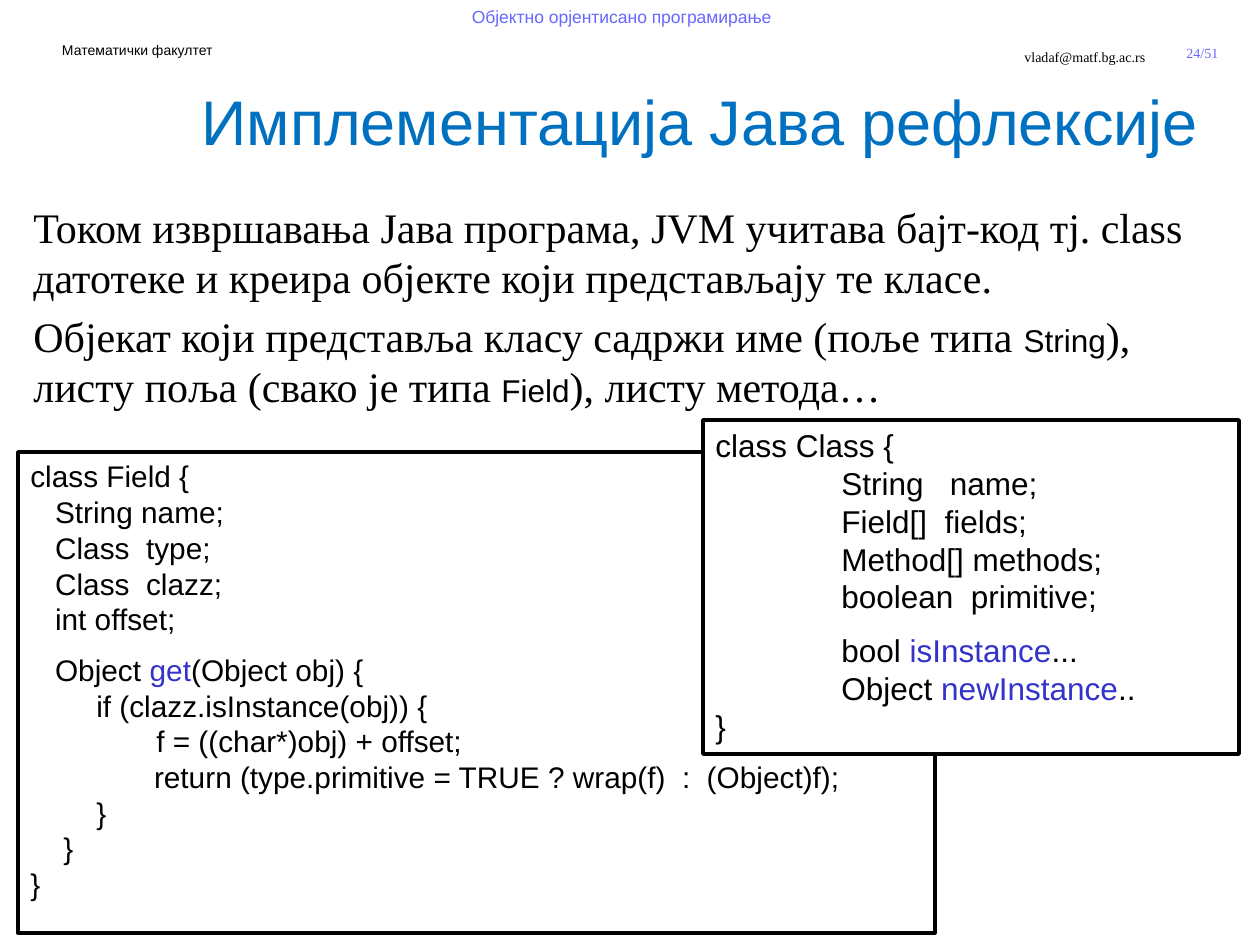
from lxml import etree
from pptx import Presentation
from pptx import util as u
from pptx.dml.color import RGBColor
from pptx.enum import shapes, text
from pptx.oxml.ns import qn

PX = 914400 / 126
WHITE = RGBColor(0xFF, 0xFF, 0xFF)
BLACK = RGBColor(0x00, 0x00, 0x00)
TITLE_BLUE = RGBColor(0x00, 0x70, 0xC0)
HEADER_BLUE = RGBColor(0x67, 0x67, 0xFF)
METHOD_BLUE = RGBColor(0x33, 0x33, 0xCC)
SANS, SERIF = "Arial", "Times New Roman"
LEFT, CENTER, RIGHT = text.PP_ALIGN.LEFT, text.PP_ALIGN.CENTER, text.PP_ALIGN.RIGHT

FIELD_CODE = [
    [("class Field {\n   String name;\n   Class  type;\n   Class  clazz;\n   int offset;", None)],
    [("   Object ", None), ("get", METHOD_BLUE),
     ("(Object obj) {\n        if (clazz.isInstance(obj)) {\n   \tf = ((char*)obj) + offset;\n"
      "               return (type.primitive = TRUE ? wrap(f)  :  (Object)f);", None)],
    [("        }\n    }\n}", None)],
]
CLASS_CODE = [
    [("class Class {\n\tString   name;\n\tField[]  fields;\n\tMethod[] methods;\n"
      "\tboolean  primitive;", None)],
    [("\tbool ", None), ("isInstance", METHOD_BLUE), ("...\n\tObject ", None),
     ("newInstance", METHOD_BLUE), ("..\n}", None)],
]
BODY = [
    [("Током извршавања Јава програма, JVM учитава бајт-код тј. class датотеке "
      "и креира објекте који представљају те класе.", False)],
    [("Објекат који представља класу садржи име (поље типа ", False), ("String", True),
     ("), листу поља (свако је типа ", False), ("Field", True), ("), листу метода…", False)],
]


def px(*lengths):
    """Turn pixel lengths into EMU."""
    return [u.Emu(round(length * PX)) for length in lengths]


def style(para, size, face, color, align=LEFT):
    """Set the font and alignment of a paragraph."""
    para.alignment = align
    para.font.size, para.font.name = u.Pt(size), face
    para.font.color.rgb = color


def add_label(page, box, wording, size, face, color, align, wrap=True):
    """Place one line of text in a box."""
    frame = page.shapes.add_textbox(*px(*box)).text_frame
    frame.word_wrap = wrap
    para = frame.paragraphs[0]
    para.text = wording
    style(para, size, face, color, align)
    return frame


def add_header(page, left, top, width):
    """Place the running header with course, faculty, address and page number."""
    add_label(page, (left + 422, top, 399, 63), "Објектно орјентисано програмирање",
              10, SANS, HEADER_BLUE, CENTER)
    add_label(page, (left + 48, top + 35, 179, 30), "Математички факултет",
              8, SANS, BLACK, CENTER, False)
    add_label(page, (left + width - 420, top + 42, 318, 63), "vladaf@matf.bg.ac.rs",
              8, SERIF, BLACK, RIGHT)
    number = add_label(page, (left + width - 89, top + 38, 63, 29), "24/51",
                       8, SERIF, HEADER_BLUE, CENTER, False)
    number.vertical_anchor = text.MSO_ANCHOR.MIDDLE


def add_title(page, box):
    """Move and format the title placeholder."""
    title = page.shapes.title
    title.left, title.top, title.width, title.height = px(*box)
    frame = title.text_frame
    frame.text = "Имплементација Јава рефлексије"
    frame.auto_size = text.MSO_AUTO_SIZE.NONE
    frame.vertical_anchor = text.MSO_ANCHOR.TOP
    style(frame.paragraphs[0], 36, SANS, TITLE_BLUE)


def add_body(page, box):
    """Place the running text, with type names in the smaller sans face."""
    frame = page.shapes.add_textbox(*px(*box)).text_frame
    frame.word_wrap = True
    for index, spans in enumerate(BODY):
        para = frame.add_paragraph() if index else frame.paragraphs[0]
        style(para, 24, SERIF, BLACK)
        if index:
            para.space_before = u.Pt(4.8)
        for wording, is_type in spans:
            span = para.add_run()
            span.text = wording
            if is_type:
                span.font.size, span.font.name = u.Pt(18), SANS


def add_code(page, box, blocks, size):
    """Place a framed code listing with highlighted method names."""
    panel = page.shapes.add_shape(shapes.MSO_SHAPE.RECTANGLE, *px(*box))
    panel.shadow.inherit = False
    panel.fill.solid()
    panel.fill.fore_color.rgb = WHITE
    panel.line.color.rgb = BLACK
    panel.line.width = u.Pt(2)
    frame = panel.text_frame
    frame.word_wrap = True
    frame.vertical_anchor = text.MSO_ANCHOR.TOP
    for index, spans in enumerate(blocks):
        para = frame.add_paragraph() if index else frame.paragraphs[0]
        if index == 1:
            para.space_before = u.Pt(size / 2)
        stops = etree.SubElement(para._p.get_or_add_pPr(), qn("a:tabLst"))
        etree.SubElement(stops, qn("a:tab"), pos=str(u.Inches(1)), algn="l")
        style(para, size, SANS, BLACK)
        for wording, color in spans:
            for number, line in enumerate(wording.split("\n")):
                if number:
                    para.add_line_break()
                span = para.add_run()
                span.text = line
                span.font.color.rgb = color or BLACK


def main():
    """Build the slide and save the deck."""
    deck = Presentation()
    deck.slide_width, deck.slide_height = px(1260, 945)
    page = deck.slides.add_slide(deck.slide_layouts[5])
    add_header(page, 0, 0, 1260)
    add_title(page, (189, 76, 1071, 120))
    add_body(page, (21, 195, 1196, 659))
    add_code(page, (18, 452, 917, 481), FIELD_CODE, 17)
    add_code(page, (703, 420, 536, 334), CLASS_CODE, 18)
    deck.save("out.pptx")


if __name__ == "__main__":
    main()
